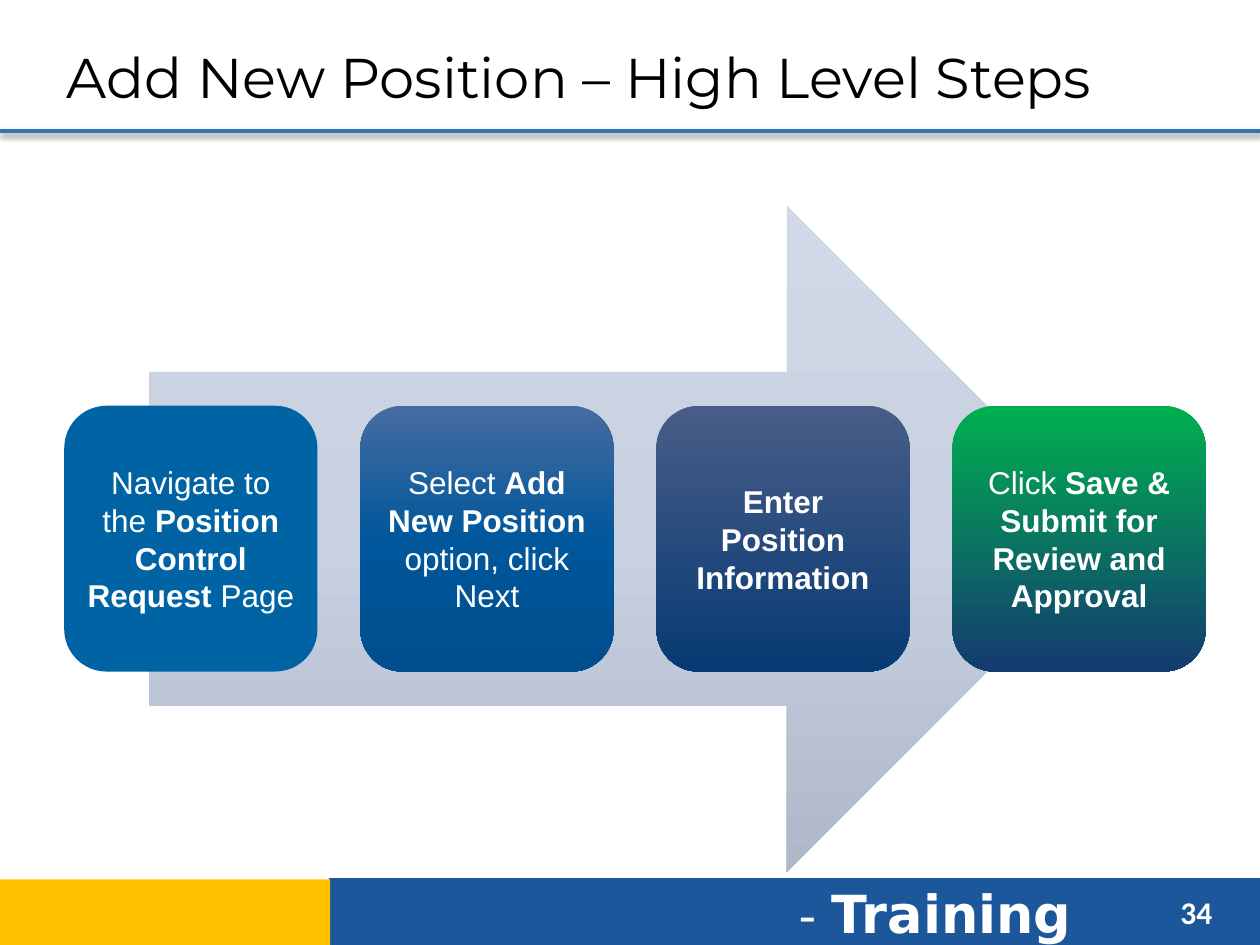
from copy import deepcopy

from lxml import etree
from pptx import Presentation
from pptx.dml.color import RGBColor
from pptx.enum.shapes import MSO_CONNECTOR, MSO_SHAPE
from pptx.enum.text import MSO_ANCHOR, PP_ALIGN
from pptx.oxml import parse_xml
from pptx.oxml.ns import nsdecls, qn
from pptx.util import Inches, Pt


def paint(fill, *colors):
    """Fill with one colour, or with evenly spaced colours from top to bottom."""
    if len(colors) == 1:
        fill.solid()
        fill.fore_color.rgb = RGBColor.from_string(colors[0])
        return
    fill.gradient()
    fill.gradient_angle = 270
    stop_list = fill.gradient_stops[0]._gs.getparent()
    for _ in colors[2:]:
        stop_list.append(deepcopy(stop_list[-1]))
    for index, (stop, color) in enumerate(zip(fill.gradient_stops, colors)):
        stop.color.rgb = RGBColor.from_string(color)
        stop.position = index / (len(colors) - 1)


def add_run(paragraph, text, size, font_name, color="FFFFFF", bold=False):
    run = paragraph.add_run()
    run.text = text
    run.font.size = Pt(size)
    run.font.name = font_name
    run.font.bold = bold
    run.font.color.rgb = RGBColor.from_string(color)


presentation = Presentation()
presentation.slide_width = Inches(10)
presentation.slide_height = Inches(7.5)
slide = presentation.slides.add_slide(presentation.slide_layouts[5])
shapes = slide.shapes

# Title and the rule below it
title = shapes.title
title.left, title.top = Inches(0.43), Inches(0.14)
title.width, title.height = Inches(9.57), Inches(0.93)
title.text_frame.vertical_anchor = MSO_ANCHOR.MIDDLE
paragraph = title.text_frame.paragraphs[0]
paragraph.alignment = PP_ALIGN.LEFT
add_run(paragraph, "Add New Position – High Level Steps", 32, "Montserrat", "000000")

rule = shapes.add_connector(
    MSO_CONNECTOR.STRAIGHT, Inches(0), Inches(1.04), Inches(10), Inches(1.04))
rule.line.color.rgb = RGBColor.from_string("2E75B5")
rule.line.width = Pt(2.25)
effects = etree.SubElement(rule._element.spPr, qn("a:effectLst"))
effects.append(parse_xml(
    f'<a:outerShdw {nsdecls("a")} blurRad="{Pt(3.1)}" dist="{Pt(1.6)}" dir="5400000" '
    'rotWithShape="0"><a:srgbClr val="000000"><a:alpha val="38000"/></a:srgbClr>'
    '</a:outerShdw>'))

# Footer
for left, top, width, color in [(2.61, 6.97, 7.39, "1D579B"), (-0.01, 6.98, 2.63, "FFC000")]:
    band = shapes.add_shape(
        MSO_SHAPE.RECTANGLE, Inches(left), Inches(top), Inches(width), Inches(0.55))
    band.shadow.inherit = False
    paint(band.fill, color)
    band.line.fill.background()

footer = shapes.add_textbox(Inches(6.24), Inches(6.94), Inches(2.8), Inches(0.61))
footer.text_frame.word_wrap = True
paragraph = footer.text_frame.paragraphs[0]
add_run(paragraph, "- ", 28, "DejaVu Sans")
add_run(paragraph, "Training", 30, "DejaVu Sans", bold=True)

page_number = shapes.add_textbox(Inches(9.27), Inches(7.04), Inches(0.6), Inches(0.4))
page_number.text_frame.word_wrap = True
add_run(page_number.text_frame.paragraphs[0], "34", 18, "Calibri", bold=True)

# Process arrow with the four steps on it
arrow = shapes.add_shape(
    MSO_SHAPE.RIGHT_ARROW, Inches(1.18), Inches(1.63), Inches(7.71), Inches(5.29))
arrow.shadow.inherit = False
paint(arrow.fill, "D1D8E5", "C8D1E1", "AFB8C8")
arrow.line.fill.background()

# Each step: fill colours, then (text, bold) runs
steps = [
    (["0064A4"],
     [("Navigate to the ", False), ("Position Control Request ", True), ("Page", False)]),
    (["476CA1", "00579B", "004E8E"],
     [("Select ", False), ("Add New Position ", True), ("option, click Next", False)]),
    (["485D88", "073A73"], [("Enter Position Information", True)]),
    (["00B050", "143B70"],
     [("Click ", False), ("Save & Submit for Review and Approval", True)]),
]
for index, (colors, runs) in enumerate(steps):
    step = shapes.add_shape(
        MSO_SHAPE.ROUNDED_RECTANGLE,
        Inches(0.51 + 2.35 * index), Inches(3.22), Inches(2.01), Inches(2.11))
    step.shadow.inherit = False
    step.adjustments[0] = 0.167
    paint(step.fill, *colors)
    step.line.fill.background()
    frame = step.text_frame
    frame.word_wrap = True
    frame.vertical_anchor = MSO_ANCHOR.MIDDLE
    frame.margin_left = frame.margin_right = Inches(0.07)
    frame.margin_top = frame.margin_bottom = Inches(0.07)
    paragraph = frame.paragraphs[0]
    paragraph.alignment = PP_ALIGN.CENTER
    for text, bold in runs:
        add_run(paragraph, text, 18, "Arial", bold=bold)

presentation.save("out.pptx")
